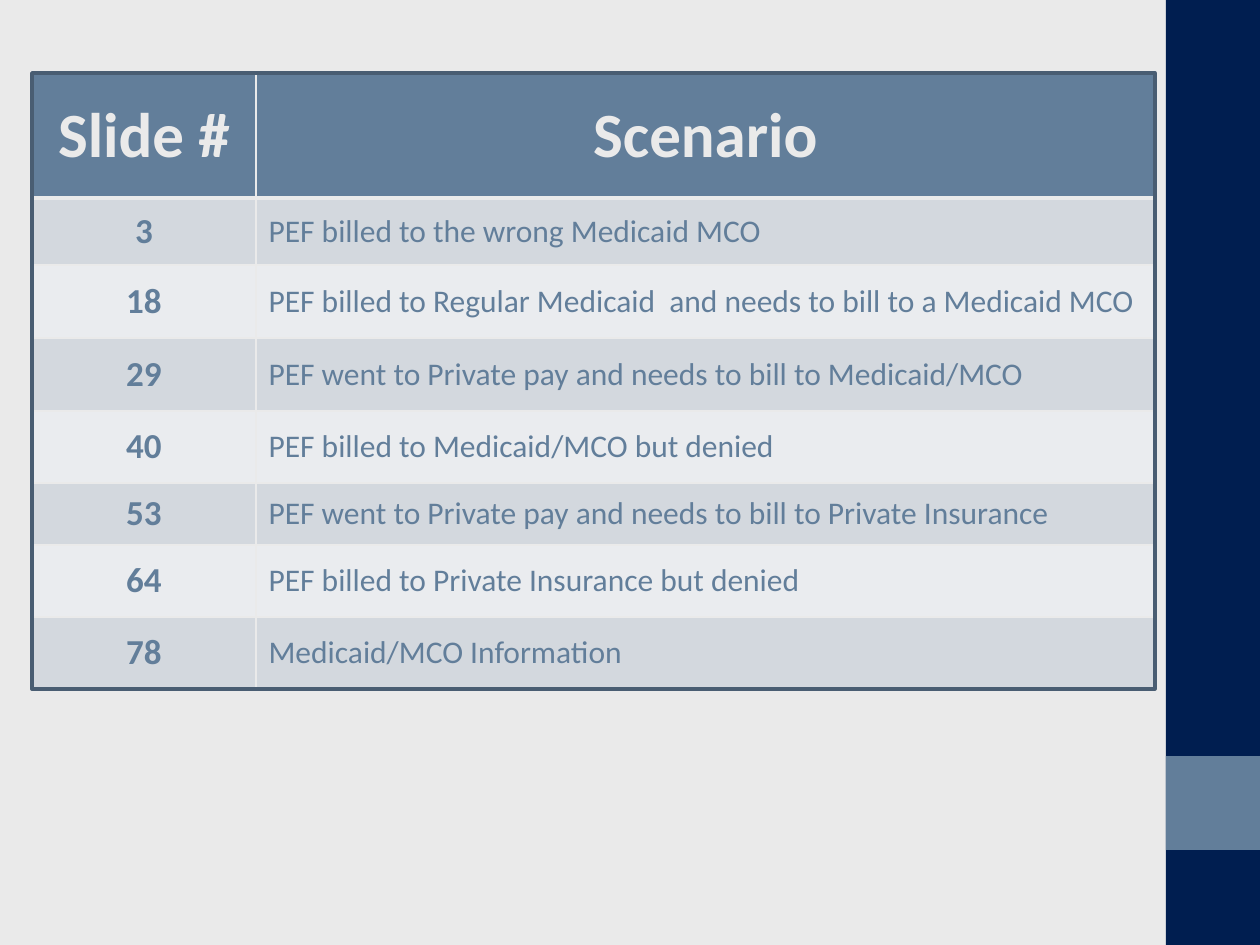
from dataclasses import dataclass

from lxml import etree
from pptx import Presentation
from pptx import util as u
from pptx.dml.color import RGBColor
from pptx.enum import shapes, text
from pptx.oxml import ns

SCALE = 914400 // 126  # EMU in one px


@dataclass(frozen=True)
class Theme:
    font: str = "Calibri"
    pale: str = "EAEAEA"
    navy: str = "001E50"
    steel: str = "627E9A"
    frame: str = "495D72"
    bands: tuple = ("D3D8DE", "EAECEF")
    head: int = 36
    num: int = 20
    body: int = 18


T = Theme()
LEFT, TOP = 32, 73
COLS = [224, 899]
ROWS = [125, 67, 73, 73, 72, 62, 72, 72]
HEADS = ("Slide #", "Scenario")
CASES = [
    ("3", "PEF billed to the wrong Medicaid MCO"),
    ("18", "PEF billed to Regular Medicaid  and needs to bill to a Medicaid MCO"),
    ("29", "PEF went to Private pay and needs to bill to Medicaid/MCO"),
    ("40", "PEF billed to Medicaid/MCO but denied"),
    ("53", "PEF went to Private pay and needs to bill to Private Insurance"),
    ("64", "PEF billed to Private Insurance but denied"),
    ("78", "Medicaid/MCO Information"),
]


def px(n):
    return u.Emu(n * SCALE)


def rgb(code):
    return RGBColor.from_string(code)


def paint(item, code):
    item.fill.solid()
    item.fill.fore_color.rgb = rgb(code)


def write(cell, words, size, color, bold=False, align=text.PP_ALIGN.LEFT):
    cell.vertical_anchor = text.MSO_ANCHOR.MIDDLE
    para = cell.text_frame.paragraphs[0]
    para.alignment = align
    run = para.add_run()
    run.text = words
    font = run.font
    font.name, font.size, font.bold = T.font, u.Pt(size), bold
    font.color.rgb = rgb(color)


def edge(cell, base=1):
    """Draw the four cell borders; base is the width of the lower one."""
    props = cell._tc.get_or_add_tcPr()
    widths = {"a:lnL": 1, "a:lnR": 1, "a:lnT": 1, "a:lnB": base}
    for spot, (tag, width) in enumerate(widths.items()):
        line = etree.Element(ns.qn(tag), w=str(u.Pt(width)))
        fill = etree.SubElement(line, ns.qn("a:solidFill"))
        etree.SubElement(fill, ns.qn("a:srgbClr"), val=T.pale)
        props.insert(spot, line)


def block(slide, x, y, w, h, fill=None, line=None):
    box = slide.shapes.add_shape(
        shapes.MSO_SHAPE.RECTANGLE, px(x), px(y), px(w), px(h))
    box.shadow.inherit = False
    if fill:
        paint(box, fill)
    else:
        box.fill.background()
    if line:
        box.line.color.rgb = rgb(line)
        box.line.width = u.Pt(2)
    else:
        box.line.fill.background()


def grid(slide):
    table = slide.shapes.add_table(
        len(ROWS), len(COLS), px(LEFT), px(TOP),
        px(sum(COLS)), px(sum(ROWS))).table
    for col, wide in zip(table.columns, COLS):
        col.width = px(wide)
    for row, high in zip(table.rows, ROWS):
        row.height = px(high)

    mid = text.PP_ALIGN.CENTER
    # Header row
    for c, words in enumerate(HEADS):
        cell = table.cell(0, c)
        paint(cell, T.steel)
        edge(cell, base=3)
        write(cell, words, T.head, T.pale, bold=True, align=mid)
    # Banded scenario rows
    for r, (num, words) in enumerate(CASES, 1):
        first, last = table.cell(r, 0), table.cell(r, 1)
        for cell in (first, last):
            paint(cell, T.bands[(r - 1) % 2])
            edge(cell)
        write(first, num, T.num, T.steel, bold=True, align=mid)
        write(last, words, T.body, T.steel)


def main():
    deck = Presentation()
    deck.slide_width, deck.slide_height = px(1260), px(945)
    slide = deck.slides.add_slide(deck.slide_layouts[6])
    paint(slide.background, T.pale)

    # Side band with its accent square
    block(slide, 1166, 0, 94, 945, fill=T.navy)
    block(slide, 1166, 756, 94, 94, fill=T.steel)

    # Scenario table and the frame around it
    grid(slide)
    block(slide, LEFT, TOP, sum(COLS), sum(ROWS), line=T.frame)

    deck.save("out.pptx")


if __name__ == "__main__":
    main()
